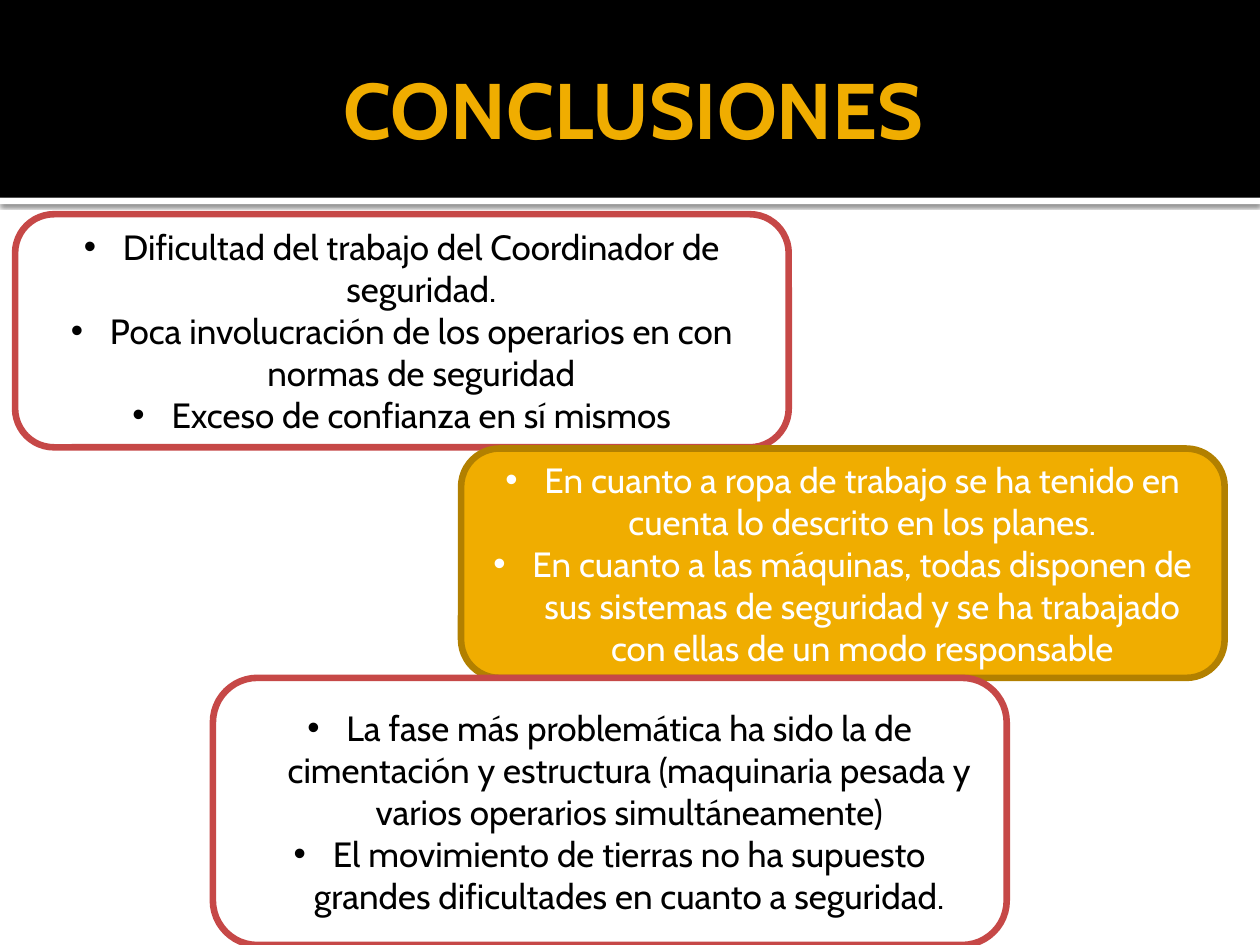
from dataclasses import dataclass

from lxml import etree
from pptx import Presentation
from pptx.dml.color import RGBColor
from pptx.enum import shapes, text
from pptx.oxml import ns
from pptx.util import Inches, Pt

BLACK = RGBColor(0x00, 0x00, 0x00)
WHITE = RGBColor(0xFF, 0xFF, 0xFF)
GOLD = RGBColor(0xF0, 0xAD, 0x00)
BROWN = RGBColor(0xB2, 0x80, 0x00)
RED = RGBColor(0xC6, 0x48, 0x47)
FONT = "Cabin"
KIND = shapes.MSO_SHAPE


@dataclass
class Card:
    at: tuple[float, float, float, float]
    fill: RGBColor
    line: RGBColor
    ink: RGBColor
    items: list[str]


CARDS = [
    Card((0.12, 1.7, 6.14, 1.85), WHITE, RED, BLACK, [
        "Dificultad del trabajo del Coordinador de seguridad.",
        "Poca involucración de los operarios en con normas de seguridad",
        "Exceso de confianza en sí mismos",
    ]),
    Card((3.66, 3.56, 6.06, 1.82), GOLD, BROWN, WHITE, [
        "En cuanto a ropa de trabajo se ha tenido en cuenta lo descrito "
        "en los planes.",
        "En cuanto a las máquinas, todas disponen de sus sistemas de "
        "seguridad y se ha trabajado con ellas de un modo responsable",
    ]),
    Card((1.69, 5.38, 6.3, 2.12), WHITE, RED, BLACK, [
        "La fase más problemática ha sido la de cimentación y estructura "
        "(maquinaria pesada y varios operarios simultáneamente)",
        "El movimiento de tierras no ha supuesto grandes dificultades en "
        "cuanto a seguridad.",
    ]),
]


def add_bullet(para) -> None:
    props = para._p.get_or_add_pPr()
    indent = Inches(0.31)
    props.set("marL", str(indent))
    props.set("indent", str(-indent))
    etree.SubElement(props, ns.qn("a:buFont"), typeface="Arial")
    etree.SubElement(props, ns.qn("a:buChar"), char="•")


def write(shape, lines: list[str], *, size: float, ink: RGBColor,
          bold: bool = False, bullet: bool = False) -> None:
    frame = shape.text_frame
    frame.word_wrap = True
    frame.vertical_anchor = text.MSO_ANCHOR.MIDDLE
    for i, line in enumerate(lines):
        para = frame.add_paragraph() if i else frame.paragraphs[0]
        para.alignment = text.PP_ALIGN.CENTER
        if bullet:
            add_bullet(para)
        run = para.add_run()
        run.text = line
        run.font.name = FONT
        run.font.size = Pt(size)
        run.font.bold = bold
        run.font.color.rgb = ink


def add_box(slide, kind, at: tuple, fill: RGBColor,
            line: RGBColor | None = None):
    box = slide.shapes.add_shape(kind, *map(Inches, at))
    box.fill.solid()
    box.fill.fore_color.rgb = fill
    if line is None:
        box.line.fill.background()
    else:
        box.line.color.rgb = line
        box.line.width = Pt(3.78)
    box.shadow.inherit = False
    return box


def add_shadow(box) -> None:
    effects = box._element.spPr.find(ns.qn("a:effectLst"))
    shade = etree.SubElement(effects, ns.qn("a:outerShdw"), blurRad=str(Pt(2.5)),
                             dist=str(Pt(0.8)), dir="5400000", rotWithShape="0")
    tone = etree.SubElement(shade, ns.qn("a:srgbClr"), val=str(BLACK))
    etree.SubElement(tone, ns.qn("a:alpha"), val="60000")


def main() -> None:
    deck = Presentation()
    deck.slide_width, deck.slide_height = Inches(10), Inches(7.5)
    slide = deck.slides.add_slide(deck.slide_layouts[6])

    # Header band with its shaded rule
    add_shadow(add_box(slide, KIND.RECTANGLE, (0, 1.57, 10, 0.05), WHITE))
    add_box(slide, KIND.RECTANGLE, (0, 0, 10, 1.57), BLACK)

    # Title
    title = slide.shapes.add_textbox(*map(Inches, (0.5, 0.17, 9, 1.37)))
    title.text_frame.margin_right = Inches(0.05)
    write(title, ["CONCLUSIONES"], size=45, ink=GOLD, bold=True)

    # Conclusion cards
    for card in CARDS:
        box = add_box(slide, KIND.ROUNDED_RECTANGLE, card.at, card.fill, card.line)
        write(box, card.items, size=20, ink=card.ink, bullet=True)

    deck.save("out.pptx")


if __name__ == "__main__":
    main()
